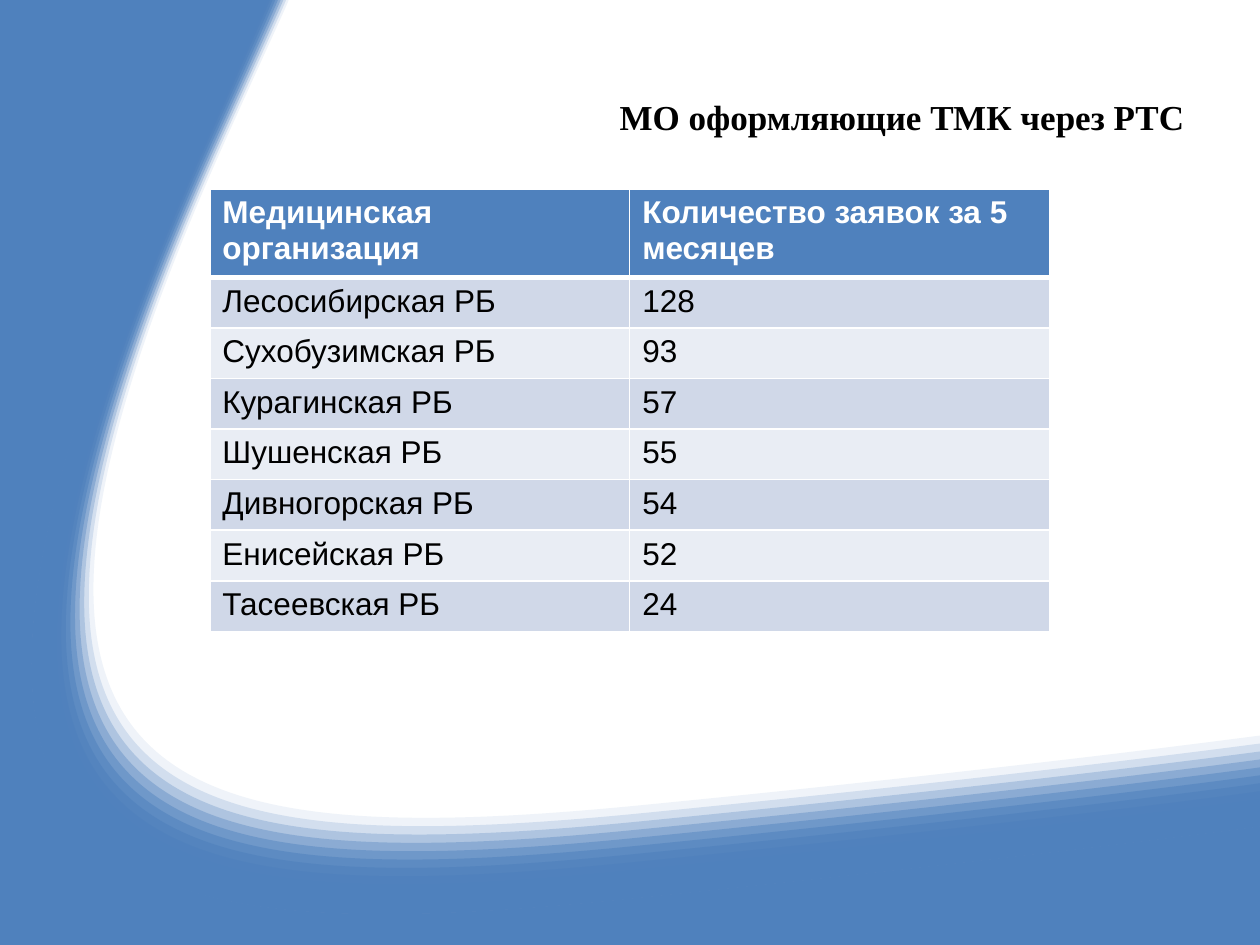
from lxml import etree
from pptx import Presentation
from pptx.dml.color import RGBColor
from pptx.enum.text import MSO_ANCHOR, PP_ALIGN
from pptx.oxml.ns import qn
from pptx.util import Cm, Pt

MIDDLE = MSO_ANCHOR.MIDDLE
RIGHT = PP_ALIGN.RIGHT
BLUE = "4F81BD"
BANDS = 11
WIDE, HIGH = 25.4, 19.05

# Each edge is three joined Bezier curves, from the right side to the top (cm).
NEAR = [(25.4, 14.83), (25.35, 14.83), (20.68, 15.47), (13.16, 16.21),
        (3.07, 17.22), (-1.4, 16.05), (4.57, 2.77),
        (5.36, 1.02), (5.82, 0.03), (5.82, 0)]
FAR = [(25.4, 16.43), (24.74, 16.54), (19.96, 17.15), (12.65, 17.88),
       (2.34, 18.92), (-2.72, 17.86), (4.01, 2.9),
       (4.72, 1.32), (5.16, 0.28), (5.28, 0)]
EDGE = [(25.4, 16.66), (25.4, 16.66), (20.47, 17.32), (12.47, 18.14),
        (2.03, 19.18), (-3.07, 18.08), (3.73, 2.92),
        (4.57, 1.04), (5.05, 0), (5.05, 0)]
CORNERS = [(0, 0), (0, HIGH), (WIDE, HIGH)]
ROWS = [("Медицинская организация", "Количество заявок за 5 месяцев"),
        ("Лесосибирская РБ", "128"), ("Сухобузимская РБ", "93"),
        ("Курагинская РБ", "57"), ("Шушенская РБ", "55"),
        ("Дивногорская РБ", "54"), ("Енисейская РБ", "52"),
        ("Тасеевская РБ", "24")]


def color(target, code):
    """Give a fill or a font its colour."""
    if hasattr(target, "solid"):
        target.solid()
        target.fore_color.rgb = RGBColor.from_string(code)
    else:
        target.color.rgb = RGBColor.from_string(code)


def curves(knots):
    return [("cubicBezTo", knots[k:k + 3]) for k in range(1, len(knots), 3)]


deck = Presentation()
deck.slide_width, deck.slide_height = Cm(WIDE), Cm(HIGH)
slide = deck.slides.add_slide(deck.slide_layouts[6])
shapes = slide.shapes

# Blue frame, then bands that grow more opaque towards it
back = EDGE[::-1]
lines = [("lnTo", [spot]) for spot in CORNERS]
areas = [([("moveTo", EDGE[:1])] + curves(EDGE) + lines, 1)]
for i in range(BANDS):
    t = i / (BANDS - 1)
    knots = [(a + (c - a) * t, b + (d - b) * t)
             for (a, b), (c, d) in zip(NEAR, FAR)]
    steps = [("moveTo", knots[:1])] + curves(knots)
    steps += [("lnTo", back[:1])] + curves(back)
    areas.append((steps, (i + 1) / BANDS))

for steps, alpha in areas:
    pen = shapes.build_freeform(0, 0)
    pen.add_line_segments([(Cm(x), Cm(y)) for x, y in CORNERS[1:] + [(WIDE, 0)]])
    wave = pen.convert_to_shape()
    route = wave._element.find(".//" + qn("a:path"))
    for old in list(route):
        route.remove(old)
    for tag, spots in steps:
        step = etree.SubElement(route, qn("a:" + tag))
        for x, y in spots:
            etree.SubElement(step, qn("a:pt"), x=str(Cm(x)), y=str(Cm(y)))
    etree.SubElement(route, qn("a:close"))
    wave.shadow.inherit = False
    wave.line.fill.background()
    color(wave.fill, BLUE)
    if alpha < 1:
        tint = wave._element.spPr.find(qn("a:solidFill") + "/" + qn("a:srgbClr"))
        etree.SubElement(tint, qn("a:alpha"), val=str(round(alpha * 100000)))

# Title
box = shapes.add_textbox(Cm(3.3), Cm(0.76), Cm(20.83), Cm(3.18))
frame = box.text_frame
frame.word_wrap = True
frame.vertical_anchor = MIDDLE
head = frame.paragraphs[0]
head.text = "МО оформляющие ТМК через РТС"
head.alignment = RIGHT
head.font.name, head.font.size, head.font.bold = "Times New Roman", Pt(20), True
color(head.font, "000000")

# Table
table = shapes.add_table(len(ROWS), 2, Cm(4.23), Cm(3.81),
                         Cm(16.93), Cm(1.02 * len(ROWS))).table
for r, row in enumerate(ROWS):
    table.rows[r].height = Cm(1.02)
    if r == 0:
        shade, ink = BLUE, "FFFFFF"
    else:
        shade, ink = ("D0D8E8" if r % 2 else "E9EDF4"), "000000"
    widths = {"L": 1, "R": 1, "T": 3 if r == 1 else 1, "B": 3 if r == 0 else 1}
    for c, text in enumerate(row):
        cell = table.cell(r, c)
        props = cell._tc.get_or_add_tcPr()
        for side, width in widths.items():
            line = etree.SubElement(props, qn("a:ln" + side), w=str(Pt(width)))
            solid = etree.SubElement(line, qn("a:solidFill"))
            etree.SubElement(solid, qn("a:srgbClr"), val="FFFFFF")
        color(cell.fill, shade)
        cell.text = text
        font = cell.text_frame.paragraphs[0].font
        font.name, font.size, font.bold = "Arial", Pt(18), r == 0
        color(font, ink)

deck.save("out.pptx")
